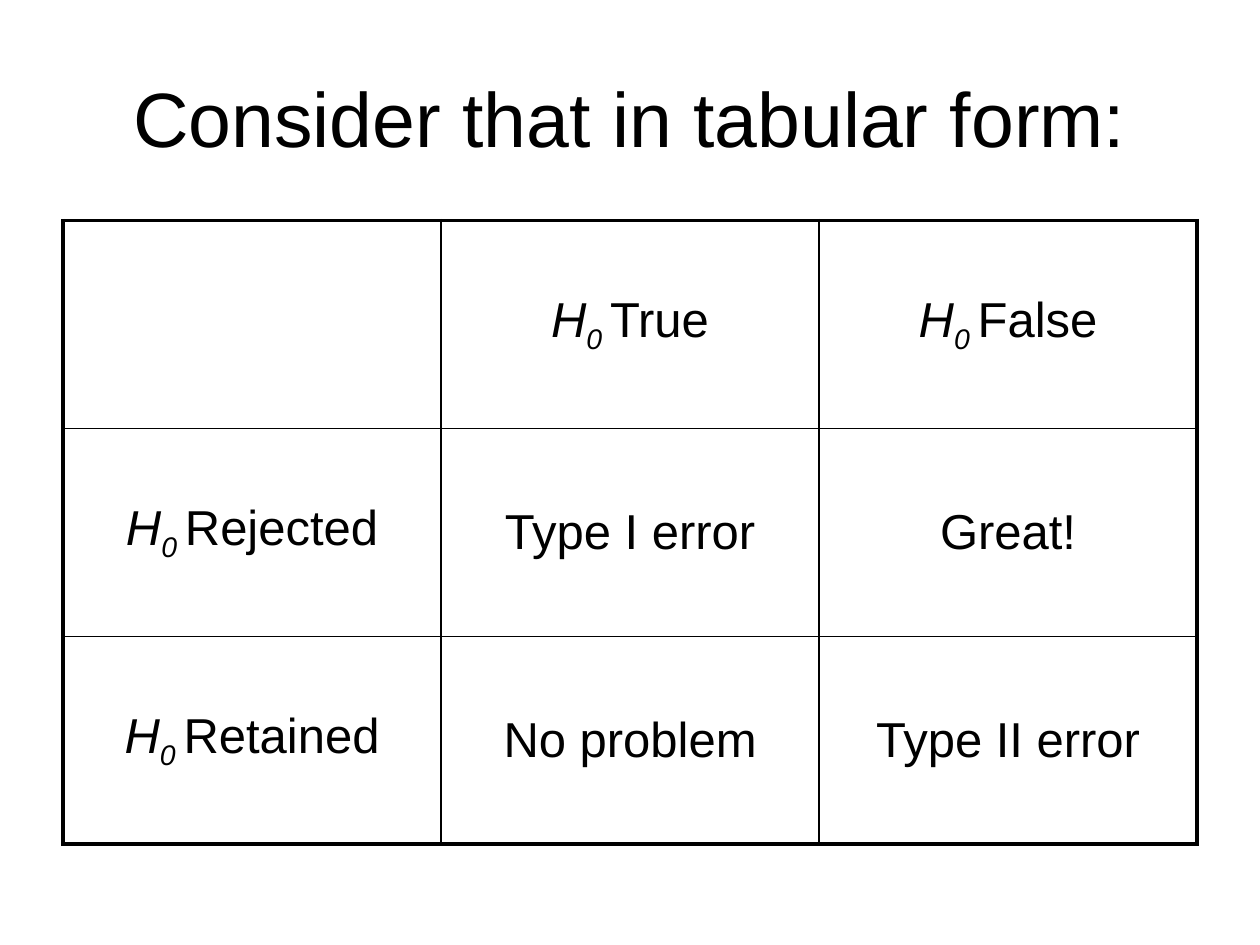
from dataclasses import dataclass

from lxml.etree import SubElement
from pptx import Presentation
from pptx.dml.color import RGBColor
from pptx.enum.text import MSO_ANCHOR, PP_ALIGN
from pptx.oxml.ns import qn
from pptx.util import Inches, Pt


@dataclass(frozen=True)
class Theme:
    font: str = "Arial"
    ink: str = "000000"
    title_size: int = 44
    cell_size: int = 28
    outer_line: float = 2.25
    inner_line: float = 1


theme = Theme()


def add_run(p, text, size, italic=False, subscript=False):
    r = p.add_run()
    r.text = text
    r.font.name = theme.font
    r.font.size = Pt(size)
    r.font.italic = italic
    r.font.color.rgb = RGBColor.from_string(theme.ink)
    if subscript:
        r.font._element.set("baseline", "-25000")


def set_borders(cell, widths):
    """Draw solid borders; widths are points in the order left, right, top, bottom."""
    tcPr = cell._tc.get_or_add_tcPr()
    for i, (side, width) in enumerate(zip("LRTB", widths)):
        ln = SubElement(tcPr, qn(f"a:ln{side}"), w=str(Pt(width)))
        fill = SubElement(ln, qn("a:solidFill"))
        SubElement(fill, qn("a:srgbClr"), val=theme.ink)
        tcPr.insert(i, ln)  # borders come before the cell fill


prs = Presentation()
prs.slide_width, prs.slide_height = Inches(10), Inches(7.5)
s = prs.slides.add_slide(prs.slide_layouts[5])

title = s.shapes.title
title.left, title.top = Inches(0.5), Inches(0.3)
title.width, title.height = Inches(9), Inches(1.25)
tf = title.text_frame
tf.vertical_anchor = MSO_ANCHOR.MIDDLE
p = tf.paragraphs[0]
p.alignment = PP_ALIGN.CENTER
add_run(p, "Consider that in tabular form:", theme.title_size)

# Each cell: whether it opens with the H0 symbol, and its words
rows = [
    [(False, ""), (True, "True"), (True, "False")],
    [(True, "Rejected"), (False, "Type I error"), (False, "Great!")],
    [(True, "Retained"), (False, "No problem"), (False, "Type II error")],
]
last = len(rows) - 1
table = s.shapes.add_table(3, 3, Inches(0.5), Inches(1.75), Inches(9), Inches(4.95)).table
table.first_row = False
table.horz_banding = False

for i, row in enumerate(rows):
    for j, (has_symbol, words) in enumerate(row):
        cell = table.cell(i, j)
        cell.fill.background()
        cell.vertical_anchor = MSO_ANCHOR.MIDDLE
        edges = (j == 0, j == last, i == 0, i == last)
        set_borders(cell, [theme.outer_line if e else theme.inner_line for e in edges])
        p = cell.text_frame.paragraphs[0]
        p.alignment = PP_ALIGN.CENTER
        p.space_before = Pt(0.2 * theme.cell_size)
        if has_symbol:
            add_run(p, "H", theme.cell_size, italic=True)
            add_run(p, "0 ", theme.cell_size, italic=True, subscript=True)
        if words:
            add_run(p, words, theme.cell_size)

prs.save("out.pptx")
